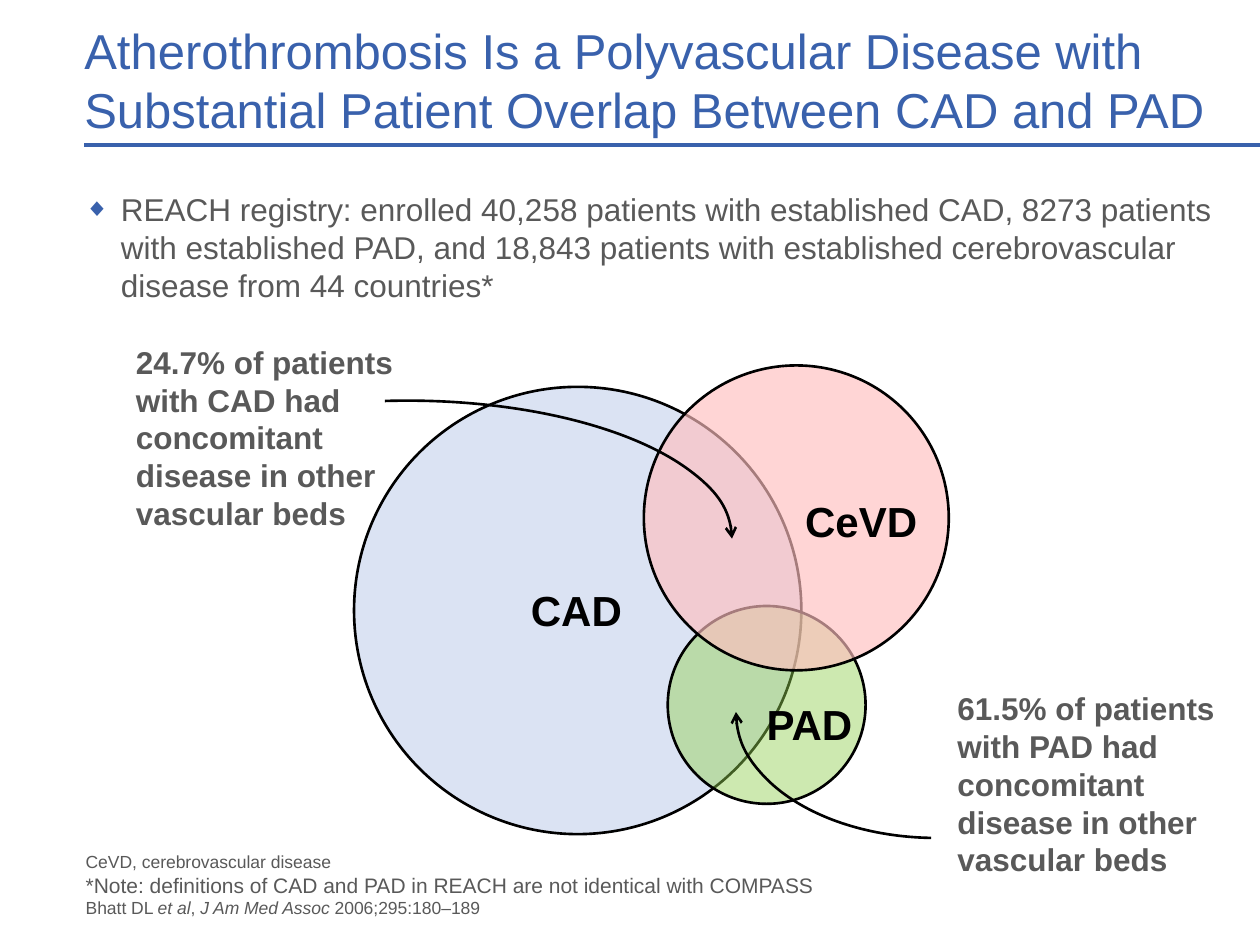
"""Build a slide on the overlap of CAD, CeVD and PAD in the REACH registry."""
import pptx
import pptx.dml.color
import pptx.enum.shapes
import pptx.enum.text
import pptx.oxml
import pptx.oxml.ns
import pptx.util

Inches = pptx.util.Inches
Pt = pptx.util.Pt
Shape = pptx.enum.shapes.MSO_SHAPE
Anchor = pptx.enum.text.MSO_ANCHOR
Align = pptx.enum.text.PP_ALIGN
THEME = {
    "font": "Arial", "blue": "3961AC", "grey": "595959", "black": "000000",
    "cad": "CCD8EE", "pad": "92D050", "cevd": "FFBFBF",
    "title": 28, "label": 24, "body": 18, "note": 12, "source": 10,
}


def rgb(name):
    """Return a theme colour."""
    return pptx.dml.color.RGBColor.from_string(THEME[name])


def add_text(box, paragraphs, color, anchor, inset=(0, 0), bold=False, wrap=True):
    """Add a text box; each run is (text, size name, italic), None breaks a line."""
    frame = slide.shapes.add_textbox(*map(Inches, box)).text_frame
    frame.word_wrap = wrap
    frame.vertical_anchor = anchor
    frame.margin_left = frame.margin_right = Inches(inset[0])
    frame.margin_top = frame.margin_bottom = Inches(inset[1])
    for index, runs in enumerate(paragraphs):
        paragraph = frame.add_paragraph() if index else frame.paragraphs[0]
        for part in runs:
            if part is None:
                paragraph.add_line_break()
                continue
            run = paragraph.add_run()
            run.text, size, run.font.italic = part
            run.font.name = THEME["font"]
            run.font.size = Pt(THEME[size])
            run.font.bold = bold
            run.font.color.rgb = rgb(color)
    return frame


deck = pptx.Presentation()
deck.slide_width, deck.slide_height = Inches(10), Inches(7.5)
slide = deck.slides.add_slide(deck.slide_layouts[6])
ns = pptx.oxml.ns.nsdecls("a")

title_rule = slide.shapes.add_connector(
    pptx.enum.shapes.MSO_CONNECTOR.STRAIGHT,
    Inches(0.67), Inches(1.15), Inches(10), Inches(1.15))
title_rule.line.color.rgb = rgb("blue")
title_rule.line.width = Pt(2.25)
title_rule._element.spPr.append(pptx.oxml.parse_xml(f"<a:effectLst {ns}/>"))

for left, top, diameter, color, opacity in (
    (2.81, 3.07, 3.55, "cad", 70),
    (5.3, 4.81, 1.57, "pad", 45),
    (5.11, 2.9, 2.42, "cevd", 65),
):
    circle = slide.shapes.add_shape(
        Shape.OVAL, *map(Inches, (left, top, diameter, diameter)))
    circle.shadow.inherit = False
    circle.fill.solid()
    circle.fill.fore_color.rgb = rgb(color)
    circle._element.spPr.find(".//" + pptx.oxml.ns.qn("a:srgbClr")).append(
        pptx.oxml.parse_xml(f'<a:alpha {ns} val="{opacity * 1000}"/>'))
    circle.line.color.rgb = rgb("black")
    circle.line.width = Pt(1.5)

for name, left, top, width in (
    ("CAD", 4.11, 4.62, 0.93), ("PAD", 5.96, 5.52, 0.93), ("CeVD", 6.27, 3.91, 1.13),
):
    label = add_text((left, top, width, 0.44), [[(name, "label", False)]],
                     "black", Anchor.MIDDLE, (0.1, 0.05), True, False)
    label.paragraphs[0].alignment = Align.CENTER

for box, runs in (
    ((7.5, 5.41, 2.49, 1.62), [
        ("61.5% of patients with PAD had concomitant disease in other vascular beds",
         "body", False)]),
    ((0.98, 2.66, 2.76, 1.62), [
        ("24.7% of patients with CAD had concomitant ", "body", False), None,
        ("disease in other vascular beds", "body", False)]),
):
    add_text(box, [runs], "grey", Anchor.MIDDLE, (0.1, 0.05), True)

for box, start, rotation in (
    ((0.66, 3.18, 5.15, 2.19), 156.38, 0),
    ((5.84, 4.65, 3.18, 2), 163.37, 180),
):
    pointer = slide.shapes.add_shape(Shape.ARC, *map(Inches, box))
    pointer.shadow.inherit = False
    pointer.adjustments[0] = start
    pointer.adjustments[1] = 0
    pointer.rotation = rotation
    pointer.fill.background()
    pointer.line.color.rgb = rgb("black")
    pointer.line.width = Pt(1.5)
    pointer.line._get_or_add_ln().append(
        pptx.oxml.parse_xml(f'<a:tailEnd {ns} type="arrow"/>'))

add_text((0.67, 0.16, 9.06, 0.94), [[
    ("Atherothrombosis Is a Polyvascular Disease with Substantial Patient Overlap "
     "Between CAD and PAD", "title", False)]], "blue", Anchor.BOTTOM)

registry = add_text((0.67, 1.51, 9.06, 0.95), [[
    ("REACH registry: enrolled 40,258 patients with established CAD, 8273 patients "
     "with established PAD, and 18,843 patients with established cerebrovascular "
     "disease from 44 countries*", "body", False)]], "grey", Anchor.TOP)
bullet = registry.paragraphs[0]._p.get_or_add_pPr()
bullet.set("marL", str(Inches(0.29)))
bullet.set("indent", str(-Inches(0.29)))
for tag in (
    f'<a:buClr {ns}><a:srgbClr val="{THEME["blue"]}"/></a:buClr>',
    f'<a:buSzPct {ns} val="80000"/>',
    f'<a:buFont {ns} typeface="{THEME["font"]}"/>',
    f'<a:buChar {ns} char="◆"/>',
):
    bullet.append(pptx.oxml.parse_xml(tag))

add_text((0.68, 6.75, 9.05, 0.54), [
    [("CeVD, cerebrovascular disease", "source", False)],
    [("*Note: definitions of CAD and PAD in REACH are not identical with COMPASS",
      "note", False), None,
     ("Bhatt DL ", "source", False), ("et al", "source", True),
     (", ", "source", False), ("J Am Med Assoc", "source", True),
     (" 2006;295:180–189", "source", False)],
], "grey", Anchor.BOTTOM)

deck.save("out.pptx")
